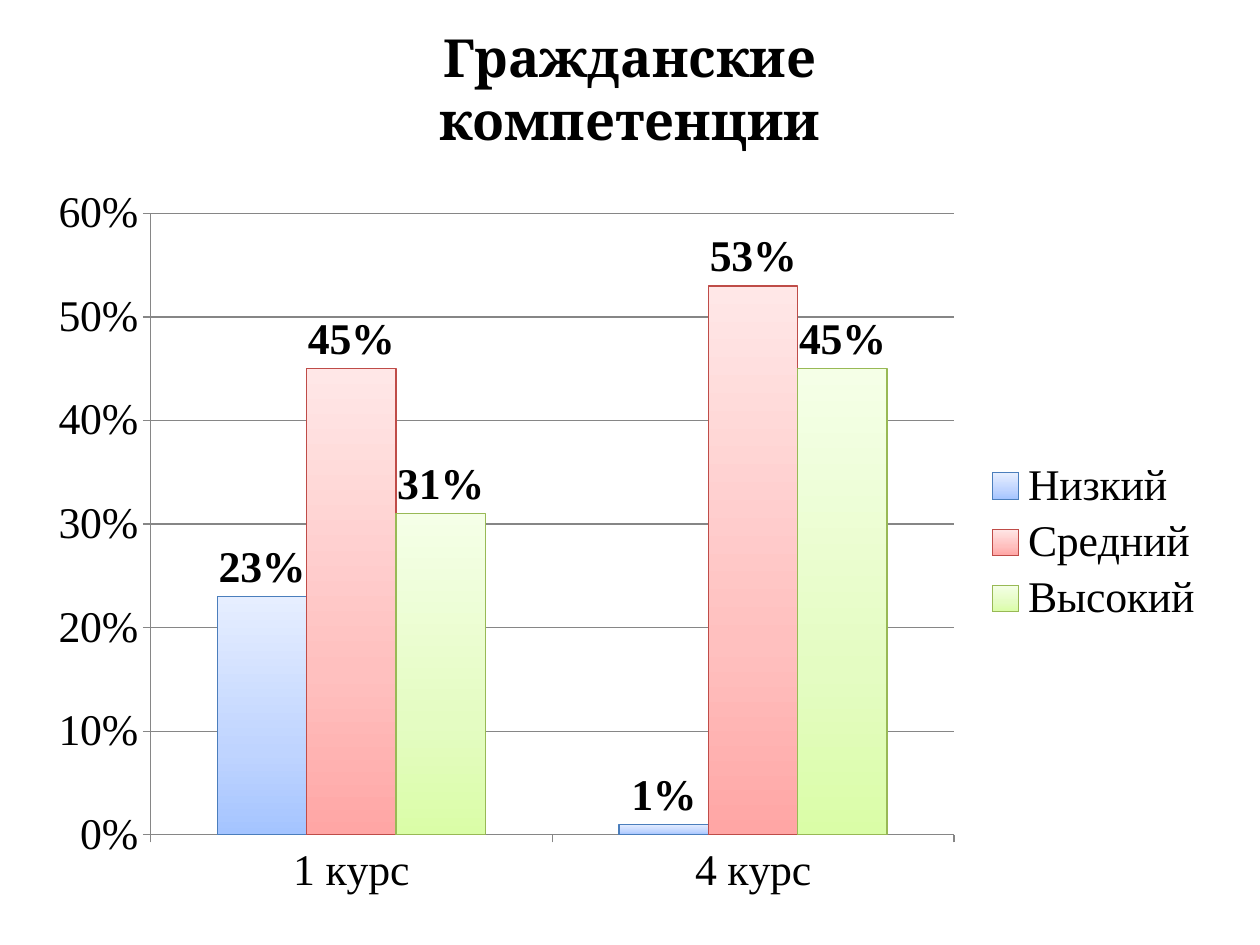
from lxml.etree import Element, SubElement
from pptx import Presentation
from pptx.chart.data import CategoryChartData
from pptx.dml.color import RGBColor as RGB
from pptx.enum.chart import XL_CHART_TYPE as CT, XL_LABEL_POSITION as LP
from pptx.enum.chart import XL_LEGEND_POSITION as LEG, XL_TICK_MARK as TICK
from pptx.enum.text import MSO_ANCHOR, PP_ALIGN
from pptx.oxml.ns import qn
from pptx.util import Cm, Pt

COLORS = {"text": "000000", "back": "FFFFFF", "axis": "868686"}
LEVELS = {
    "Низкий ": ((0.23, 0.01), ("A4C4FF", "BFD4FF", "E6EEFF"), "4B7EBC"),
    "Средний ": ((0.45, 0.53), ("FFA6A5", "FFC0BF", "FFE7E7"), "BF4C48"),
    "Высокий": ((0.31, 0.45), ("DAFDA7", "E4FCC2", "F5FFE7"), "98B955"),
}
STOPS = (0, 35, 100)


def rgb(name):
    """Return the named colour."""
    return RGB.from_string(COLORS[name])


def add_veil(parent, opacity):
    """Add a see-through background fill of the given percent."""
    fill = SubElement(parent, qn("a:solidFill"))
    clr = SubElement(fill, qn("a:srgbClr"), val=COLORS["back"])
    SubElement(clr, qn("a:alpha"), val=str(opacity * 1000))


def add_title(slide, x, y, w, h):
    """Place the two-line heading in the title placeholder."""
    sp = slide.shapes.title
    sp.left, sp.top, sp.width, sp.height = x, y, w, h
    add_veil(sp.element.spPr, 70)
    tf = sp.text_frame
    tf.text = "Гражданские\nкомпетенции"
    tf.vertical_anchor = MSO_ANCHOR.TOP
    for p in tf.paragraphs:
        p.alignment = PP_ALIGN.CENTER
        p.font.name, p.font.size, p.font.bold = "Cambria", Pt(30), True
        p.font.color.rgb = rgb("text")


def style_series(s, ser, shades, line):
    """Give one series its upward gradient, outline and labels."""
    s.format.fill.gradient()
    s.format.fill.gradient_angle = 90
    stops = ser.find(".//" + qn("a:gsLst"))
    for old in list(stops):
        stops.remove(old)
    for pos, shade in zip(STOPS, shades):
        gs = SubElement(stops, qn("a:gs"), pos=str(pos * 1000))
        SubElement(gs, qn("a:srgbClr"), val=shade)
    s.format.line.color.rgb = RGB.from_string(line)
    s.format.line.width = Pt(0.75)
    labels = s.data_labels
    labels.show_value = True
    labels.number_format, labels.number_format_is_linked = "0%", False
    labels.position = LP.OUTSIDE_END
    labels.font.bold = True
    labels.font.size = Pt(25)
    labels.font.name = "Times New Roman"


def add_level_chart(slide, x, y, w, h):
    """Place the clustered columns comparing two years of study."""
    data = CategoryChartData(number_format="0%")
    data.categories = ["1 курс", "4 курс"]
    for name, (values, _, _) in LEVELS.items():
        data.add_series(name, values)
    chart = slide.shapes.add_chart(CT.COLUMN_CLUSTERED, x, y, w, h, data).chart
    chart.has_title = False
    chart.font.name, chart.font.size = "Times New Roman", Pt(25)
    chart.font.color.rgb = rgb("text")
    chart.has_legend = True
    chart.legend.position = LEG.RIGHT
    chart.legend.include_in_layout = False
    frame = Element(qn("c:spPr"))
    chart.element.find(qn("c:chart")).addnext(frame)
    add_veil(frame, 50)

    plot = chart.plots[0]
    plot.gap_width, plot.overlap, plot.vary_by_categories = 150, 0, False
    sers = chart.element.findall(".//" + qn("c:ser"))
    for s, ser, (_, shades, line) in zip(plot.series, sers, LEVELS.values()):
        style_series(s, ser, shades, line)

    val = chart.value_axis
    val.minimum_scale, val.maximum_scale, val.major_unit = 0, 0.6, 0.1
    val.has_major_gridlines = True
    val.tick_labels.number_format = "0%"
    val.tick_labels.number_format_is_linked = False
    for axis in (val, chart.category_axis):
        axis.major_tick_mark = TICK.OUTSIDE
    for part in (val, chart.category_axis, val.major_gridlines):
        part.format.line.color.rgb = rgb("axis")
        part.format.line.width = Pt(0.75)


def main():
    """Build and save the slide."""
    prs = Presentation()
    prs.slide_width, prs.slide_height = Cm(25.4), Cm(19.05)
    slide = prs.slides.add_slide(prs.slide_layouts[5])
    left, width = Cm(0.7), Cm(24)
    add_title(slide, left, Cm(0.38), width, Cm(2.82))
    add_level_chart(slide, left, Cm(3.53), width, Cm(14.8))
    prs.save("out.pptx")


if __name__ == "__main__":
    main()
